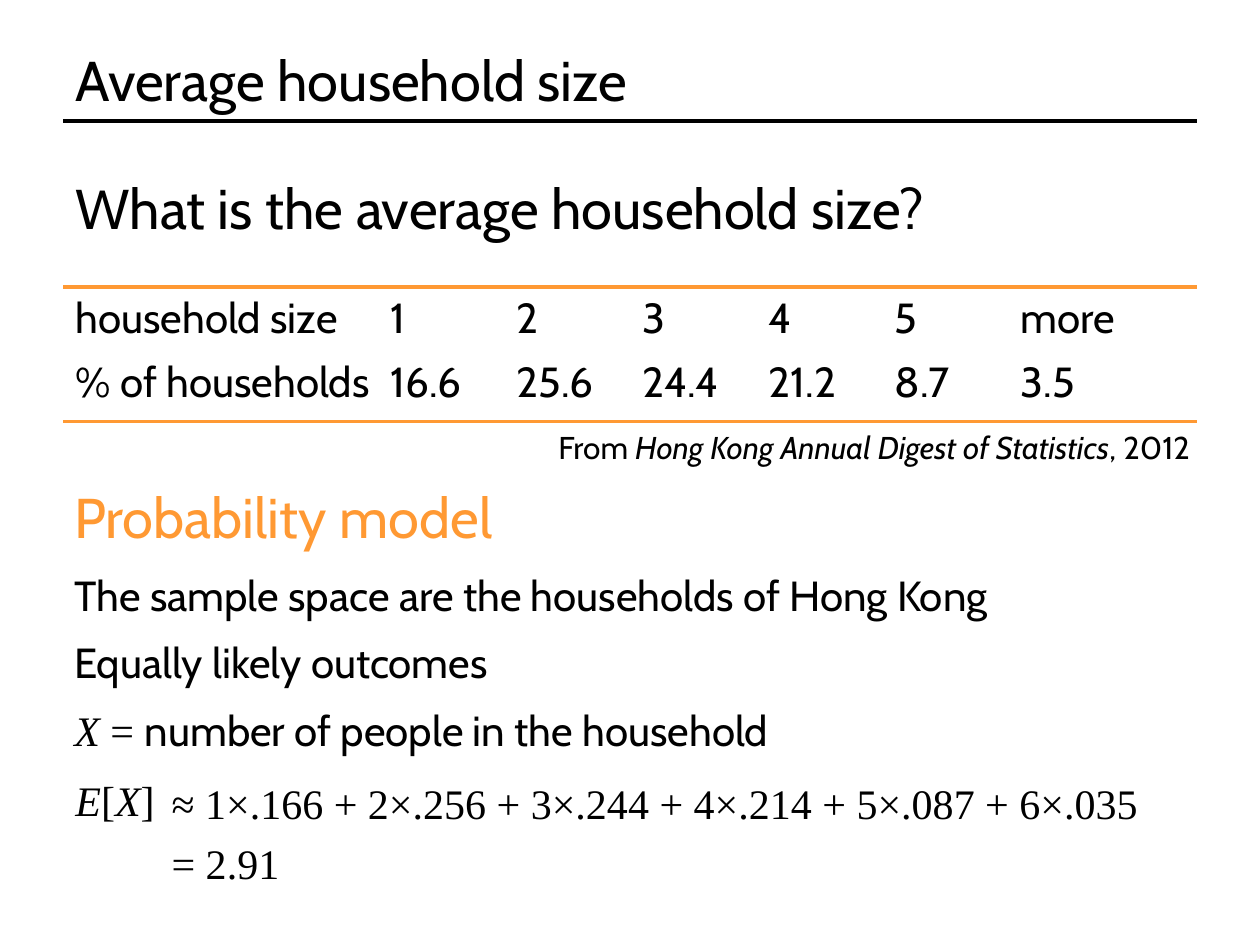
from lxml.etree import SubElement
from pptx import Presentation
from pptx.dml.color import RGBColor
from pptx.enum.shapes import MSO_CONNECTOR
from pptx.enum.text import MSO_ANCHOR, MSO_AUTO_SIZE, PP_ALIGN
from pptx.oxml.ns import qn
from pptx.util import Pt

SANS, SERIF = "Cabin", "Times New Roman"
BLACK, ORANGE = "000000", "FF9933"
LEFT, WIDTH = 36, 648
SIZES = ["household size", "1", "2", "3", "4", "5", "more"]
SHARES = ["% of households", "16.6", "25.6", "24.4", "21.2", "8.7", "3.5"]


def color(hex_string):
    return RGBColor.from_string(hex_string)


def add_run(p, text, size=24, font=SANS, fill=BLACK, italic=False):
    r = p.add_run()
    r.text = text
    for name, value in dict(name=font, size=Pt(size), italic=italic).items():
        setattr(r.font, name, value)
    r.font.color.rgb = color(fill)


def write(tf, paragraphs, align=PP_ALIGN.LEFT, gap=0, **run_format):
    """Fill a text frame; a paragraph is a list of (text, format) runs."""
    for i, runs in enumerate(paragraphs):
        p = tf.paragraphs[0] if i == 0 else tf.add_paragraph()
        formats = dict(alignment=align, space_before=Pt(0), space_after=Pt(gap))
        for name, value in formats.items():
            setattr(p, name, value)
        for text, own_format in runs:
            add_run(p, text, **{**run_format, **own_format})


def place(sp, x, y, w, h):
    for name, value in dict(left=x, top=y, width=w, height=h).items():
        setattr(sp, name, Pt(value))
    return sp


def set_frame(tf, anchor=MSO_ANCHOR.TOP):
    formats = dict(word_wrap=True, auto_size=MSO_AUTO_SIZE.NONE, vertical_anchor=anchor)
    for name, value in formats.items():
        setattr(tf, name, value)
    return tf


def add_text(s, x, y, w, h, paragraphs, **text_format):
    tf = set_frame(s.shapes.add_textbox(Pt(x), Pt(y), Pt(w), Pt(h)).text_frame)
    write(tf, paragraphs, **text_format)
    return tf


def add_rule(s, x, y, w, fill):
    line = s.shapes.add_connector(MSO_CONNECTOR.STRAIGHT, Pt(x), Pt(y), Pt(x + w), Pt(y))
    line.line.color.rgb = color(fill)
    line.line.width = Pt(2)
    SubElement(line._element.spPr, qn("a:effectLst"))


def add_title(s, x, y, w, h):
    sp = place(s.shapes.title, x, y, w, h)
    tf = set_frame(sp.text_frame, MSO_ANCHOR.MIDDLE)
    write(tf, [[("Average household size", {})]], size=32)
    add_rule(s, x, y + h, w, BLACK)


def add_household_table(s, x, y, w, h):
    """Two rows between orange rules, with the source below."""
    row_h, label_w, value_w = 36, 180, 72
    frame = s.shapes.add_table(2, len(SIZES), Pt(x), Pt(y), Pt(w), Pt(2 * row_h))
    table = frame.table
    for name in ("first_row", "horz_banding"):
        setattr(table, name, False)
    last_w = w - label_w - value_w * (len(SIZES) - 2)
    widths = [label_w] + [value_w] * (len(SIZES) - 2) + [last_w]
    for column, column_w in zip(table.columns, widths):
        column.width = Pt(column_w)
    for row, texts in zip(table.rows, (SIZES, SHARES)):
        row.height = Pt(row_h)
        for cell, text in zip(row.cells, texts):
            cell.fill.background()
            cell.margin_right = Pt(0)
            write(cell.text_frame, [[(text, {})]])
    for rule_y in (y, y + h):
        add_rule(s, x, rule_y, w, ORANGE)
    source = [("From ", {}),
              ("Hong Kong Annual Digest of Statistics", dict(italic=True)),
              (", 2012", {})]
    tf = add_text(s, x, y + h, w, 29, [source], align=PP_ALIGN.RIGHT, size=18)
    tf.margin_right = Pt(4)


def add_model(s, x, y, w, h):
    """Heading and the list of assumptions."""
    heading_h = 49.5
    add_text(s, x, y, w, heading_h, [[("Probability model", {})]], size=32, fill=ORANGE)
    body = place(s.placeholders[1], x, y + heading_h, w, h - heading_h)
    tf = set_frame(body.text_frame)
    variable = [("X", dict(font=SERIF, italic=True)), (" = ", dict(font=SERIF)),
                ("number of people in the household", {})]
    write(tf, [[("The sample space are the households of Hong Kong", {})],
               [("Equally likely outcomes", {})], variable], gap=9.7)
    for p in tf.paragraphs:
        pPr = p._p.get_or_add_pPr()
        for name in ("marL", "indent"):
            pPr.set(name, "0")
        SubElement(pPr, qn("a:buNone"))


def add_expectation(s, x, y, w, h):
    left_w = 55
    italic = dict(italic=True)
    add_text(s, x, y, left_w + 8, 36,
             [[("E", italic), ("[", {}), ("X", italic), ("]", {})]], font=SERIF)
    add_text(s, x + left_w, y + 1.4, w - left_w, h,
             [[("≈ 1×.166 + 2×.256 + 3×.244 + 4×.214 + 5×.087 + 6×.035", {})],
              [("= 2.91", {})]], font=SERIF, gap=5.5)


def main():
    prs = Presentation()
    prs.slide_width, prs.slide_height = Pt(720), Pt(540)
    s = prs.slides.add_slide(prs.slide_layouts[1])
    add_title(s, LEFT, 21.6, WIDTH, 47.5)
    add_text(s, LEFT, 95.8, WIDTH, 46,
             [[("What is the average household size?", {})]], size=32)
    add_household_table(s, LEFT, 164, WIDTH, 77)
    add_model(s, LEFT - 0.7, 272.2, WIDTH, 163.5)
    add_expectation(s, LEFT, 439.2, WIDTH, 70)
    prs.save("out.pptx")


if __name__ == "__main__":
    main()
